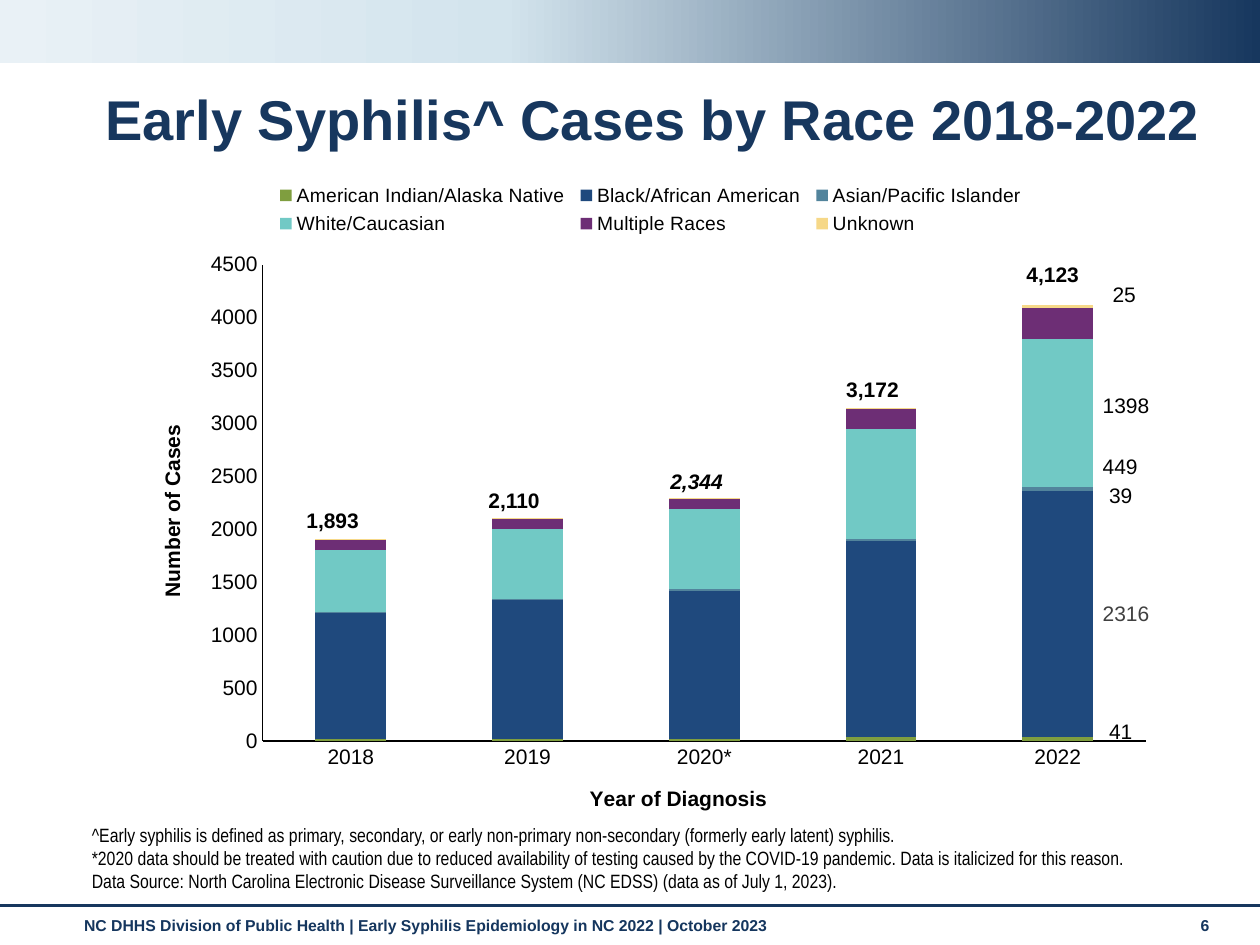
"""Build the slide on early syphilis cases by race."""
from copy import deepcopy
from lxml.etree import SubElement
from pptx import Presentation
from pptx.chart.data import CategoryChartData
from pptx.dml.color import RGBColor
from pptx.enum.chart import (XL_CHART_TYPE as Kind, XL_LEGEND_POSITION as Spot,
                             XL_TICK_MARK as Tick)
from pptx.enum.shapes import MSO_CONNECTOR as Conn, MSO_SHAPE as Form
from pptx.enum.text import MSO_ANCHOR as Anchor, MSO_AUTO_SIZE as Auto, PP_ALIGN as Align
from pptx.oxml import parse_xml
from pptx.oxml.ns import qn
from pptx.util import Pt

NAVY = RGBColor(0x17, 0x37, 0x5E)
INK = RGBColor(0x15, 0x36, 0x5E)
BLACK = RGBColor(0, 0, 0)
GREY = RGBColor(0x40, 0x40, 0x40)
PALE = RGBColor(0xD3, 0xE4, 0xED)
MIST = RGBColor(0xE9, 0xF1, 0xF6)
GREEN = RGBColor(0x7F, 0x9E, 0x3F)
BLUE = RGBColor(0x1F, 0x49, 0x7D)
STEEL = RGBColor(0x52, 0x84, 0x9C)
TEAL = RGBColor(0x71, 0xC9, 0xC5)
PLUM = RGBColor(0x6D, 0x2E, 0x75)
SAND = RGBColor(0xF6, 0xD8, 0x88)

TITLE = "Early Syphilis^ Cases by Race 2018-2022"
FOOT = "NC DHHS Division of Public Health | Early Syphilis Epidemiology in NC 2022 | October 2023"
NOTES = [
    "^Early syphilis is defined as primary, secondary, or early non-primary non-secondary (formerly early latent) syphilis.",
    "*2020 data should be treated with caution due to reduced availability of testing caused by the COVID-19 pandemic. Data is italicized for this reason.",
    "Data Source: North Carolina Electronic Disease Surveillance System (NC EDSS) (data as of July 1, 2023).",
]
BAND = [(0, NAVY), (0.6, PALE), (1, MIST)]
YEARS = ["2018", "2019", "2020*", "2021", "2022"]
RACES = [
    ("American Indian/Alaska Native", (18, 17, 16, 35, 41), GREEN, BLACK, (36, -4)),
    ("Black/African American", (1187, 1310, 1402, 1857, 2316), BLUE, GREY, (39, 0)),
    ("Asian/Pacific Islander", (13, 18, 13, 17, 39), STEEL, BLACK, (36, 4)),
    ("White/Caucasian", (585, 660, 761, 1033, 1398), TEAL, BLACK, (39, -4)),
    ("Multiple Races", (100, 100, 100, 200, 300), PLUM, BLACK, None),
    ("Unknown", (1, 1, 6, 7, 25), SAND, BLACK, (38, -6)),
]
TOTALS = [("1,893", 168, 286.5), ("2,110", 272, 275), ("2,344", 376, 264),
          ("3,172", 476.5, 211.5), ("4,123", 579.5, 146)]
WIDE, HIGH = 591, 381
EDGE = [("xMode", "edge"), ("yMode", "edge")]


def style(font, size, color=BLACK, bold=False, face="Arial"):
    font.name, font.size, font.bold = face, Pt(size), bold
    font.color.rgb = color


def write(slide, lines, box, size, color=BLACK, bold=False, face="Arial"):
    frame = slide.shapes.add_textbox(*map(Pt, box)).text_frame
    frame.word_wrap = True
    frame.text = "\n".join(lines)
    for para in frame.paragraphs:
        style(para.runs[0].font, size, color, bold, face)
    return frame


def place(node, index, modes, *box):
    for old in node.findall(qn("c:layout")):
        node.remove(old)
    lay = parse_xml('<c:layout xmlns:c="http://schemas.openxmlformats.org/'
                    'drawingml/2006/chart"><c:manualLayout/></c:layout>')
    spots = [(tag, part / full) for tag, part, full
             in zip("xywh", box, (WIDE, HIGH, WIDE, HIGH))]
    for tag, val in (*modes, *spots):
        SubElement(lay[0], qn("c:" + tag)).set("val", str(val))
    node.insert(index, lay)


def frame_page(slide):
    band = slide.shapes.add_shape(Form.RECTANGLE, 0, 0, Pt(720), Pt(36))
    band.shadow.inherit = False
    band.line.fill.background()
    band.fill.gradient()
    band.fill.gradient_angle = 180
    stops = band._element.spPr.find(".//" + qn("a:gsLst"))
    stops.append(deepcopy(stops[-1]))
    for stop, (spot, color) in zip(band.fill.gradient_stops, BAND):
        stop.position, stop.color.rgb = spot, color
    rule = slide.shapes.add_connector(Conn.STRAIGHT, 0, Pt(517.5), Pt(720), Pt(517.5))
    rule.line.color.rgb, rule.line.width = NAVY, Pt(1.75)
    SubElement(rule._element.spPr, qn("a:effectLst"))
    write(slide, [FOOT], (41, 520, 629, 21), 9, INK, True)
    write(slide, ["6"], (679, 520, 32, 21), 9, INK, True)


def set_title(slide):
    head = slide.shapes.title
    head.left, head.top, head.width, head.height = map(Pt, (53, 48.5, 657, 43))
    frame = head.text_frame
    frame.text = TITLE
    frame.auto_size, frame.vertical_anchor = Auto.NONE, Anchor.MIDDLE
    para = frame.paragraphs[0]
    para.alignment, para.line_spacing = Align.LEFT, 0.9
    style(para.runs[0].font, 32, NAVY, True)


def set_axis(axis, name, x, y):
    axis.has_major_gridlines = False
    axis.major_tick_mark = axis.minor_tick_mark = Tick.NONE
    axis.format.line.color.rgb, axis.format.line.width = BLACK, Pt(0.75)
    style(axis.tick_labels.font, 12)
    title = axis.axis_title
    title.text_frame.text = name
    style(title.text_frame.paragraphs[0].runs[0].font, 12, BLACK, True)
    place(title._element, 1, EDGE, x, y)


def set_label(series, ink, shift):
    series.data_labels.show_value = False
    style(series.points[len(YEARS) - 1].data_label.font, 12, ink)
    place(series._element.find(".//" + qn("c:dLbl")), 1, [], *shift)
    for lead in series._element.iter(qn("c:showLeaderLines")):
        lead.set("val", "0")


def add_cases(slide):
    data = CategoryChartData()
    data.categories = YEARS
    for name, vals, *_ in RACES:
        data.add_series(name, vals)
    chart = slide.shapes.add_chart(Kind.COLUMN_STACKED,
                                   *map(Pt, (76.3, 98, WIDE, HIGH)), data).chart
    style(chart.font, 10)
    chart.has_title = False
    plot = chart.plots[0]
    plot.gap_width, plot.overlap, plot.vary_by_categories = 150, 100, False
    for series, (_, _, color, ink, shift) in zip(plot.series, RACES):
        series.format.fill.solid()
        series.format.fill.fore_color.rgb = color
        if shift:
            set_label(series, ink, shift)
    set_axis(chart.category_axis, "Year of Diagnosis", 258.5, 349)
    set_axis(chart.value_axis, "Number of Cases", 12.5, 142.5)
    axis = chart.value_axis
    axis.minimum_scale, axis.maximum_scale, axis.major_unit = 0, 4500, 500
    chart.has_legend = True
    legend = chart.legend
    legend.position, legend.include_in_layout = Spot.TOP, False
    style(legend.font, 11)
    place(legend._element, 1, EDGE, 78.5, 4, 434, 35.5)
    area = chart._chartSpace.find(".//" + qn("c:plotArea"))
    place(area, 0, [("layoutTarget", "inner"), *EDGE], 73.7, 53.2, 505, 272.3)


def main():
    deck = Presentation()
    deck.slide_width, deck.slide_height = Pt(720), Pt(540)
    slide = deck.slides.add_slide(deck.slide_layouts[5])
    frame_page(slide)
    set_title(slide)
    notes = write(slide, NOTES, (45.4, 468, 629, 45.5), 11, face="Arial Narrow")
    notes.vertical_anchor = Anchor.BOTTOM
    add_cases(slide)
    write(slide, ["449"], (623, 255.5, 34.5, 21.5), 12)
    for (total, left, top), year in zip(TOTALS, YEARS):
        frame = write(slide, [total], (left, top, 52, 21.5), 12, bold=True)
        frame.paragraphs[0].runs[0].font.italic = year.endswith("*")
    deck.save("out.pptx")


if __name__ == "__main__":
    main()
